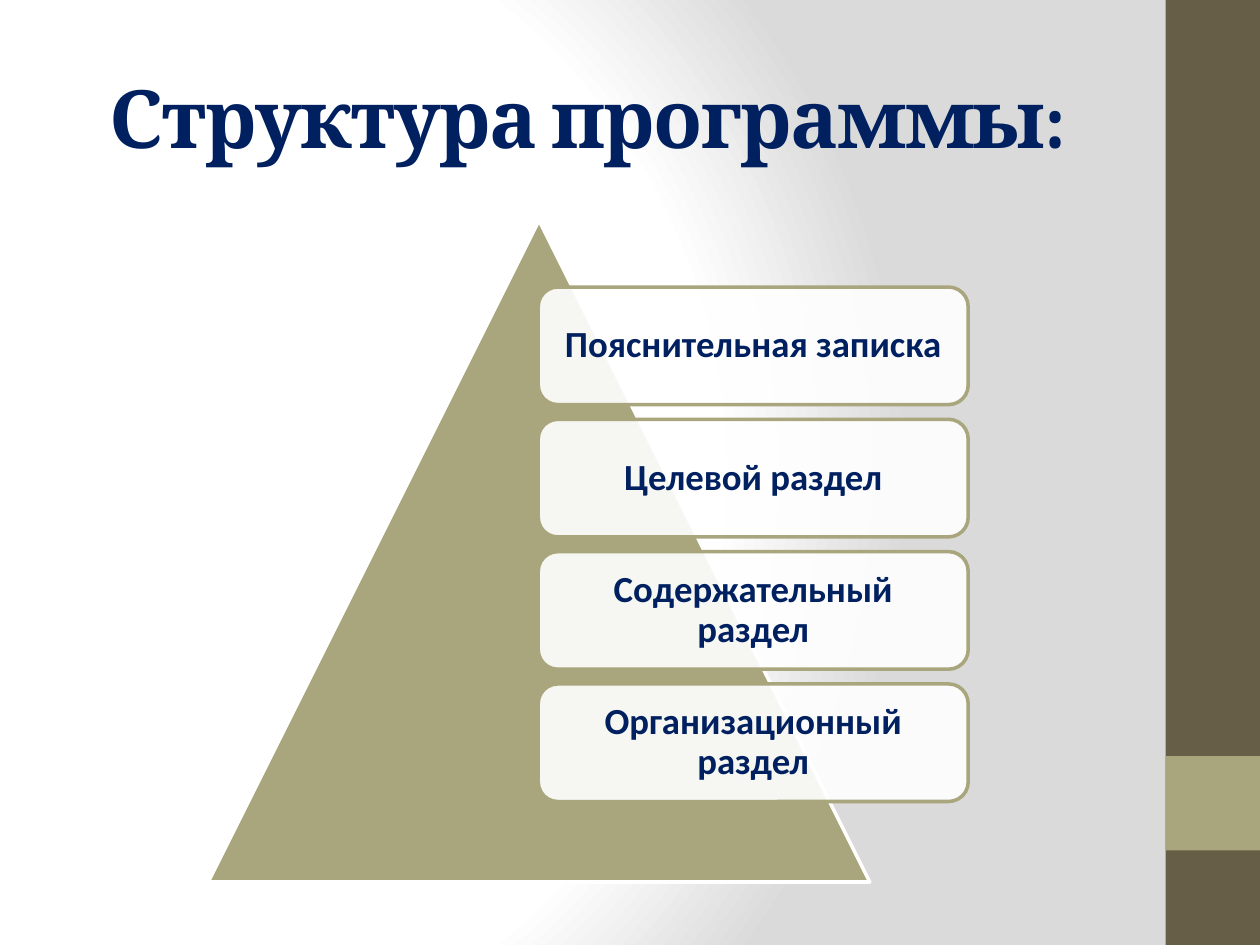
from pptx import Presentation
from pptx.dml.color import RGBColor
from pptx.enum.shapes import MSO_SHAPE
from pptx.enum.text import MSO_ANCHOR, PP_ALIGN
from pptx.oxml import parse_xml
from pptx.oxml.ns import nsdecls
from pptx.util import Pt

COLORS = {
    "navy": "002060",
    "olive": "A9A57C",
    "brown": "675E47",
    "white": "FFFFFF",
    "gray": "DADADA",
}


def add_shape(kind, left, top, width, height, fill, line=None):
    shape = slide.shapes.add_shape(kind, Pt(left), Pt(top), Pt(width), Pt(height))
    shape.shadow.inherit = False
    shape.fill.solid()
    shape.fill.fore_color.rgb = RGBColor.from_string(COLORS[fill])
    if line:
        shape.line.color.rgb = RGBColor.from_string(COLORS[line])
        shape.line.width = Pt(2)
    else:
        shape.line.fill.background()
    return shape


def write_text(shape, text, *, font, size, inset, line_spacing=1.0, tracking=0):
    frame = shape.text_frame
    frame.word_wrap = True
    frame.vertical_anchor = MSO_ANCHOR.MIDDLE
    frame.margin_left = frame.margin_right = Pt(inset)
    frame.margin_top = frame.margin_bottom = Pt(inset)
    paragraph = frame.paragraphs[0]
    paragraph.alignment = PP_ALIGN.CENTER
    paragraph.line_spacing = line_spacing
    run = paragraph.add_run()
    run.text = text
    run.font.name = font
    run.font.size = Pt(size)
    run.font.bold = True
    run.font.color.rgb = RGBColor.from_string(COLORS["navy"])
    if tracking:
        run.font._element.set("spc", str(tracking * 100))


presentation = Presentation()
presentation.slide_width, presentation.slide_height = Pt(720), Pt(540)
slide = presentation.slides.add_slide(presentation.slide_layouts[6])

# Background: radial gradient from white to gray
stops = "".join(
    f'<a:gs pos="{position * 1000}"><a:srgbClr val="{COLORS[color]}"/></a:gs>'
    for position, color in [(0, "white"), (75, "white"), (100, "gray")]
)
slide.element.cSld.insert(0, parse_xml(
    f'<p:bg {nsdecls("p", "a")}><p:bgPr><a:gradFill rotWithShape="1">'
    f'<a:gsLst>{stops}</a:gsLst><a:path path="circle">'
    '<a:fillToRect l="20000" t="50000" r="100000" b="50000"/></a:path>'
    '</a:gradFill><a:effectLst/></p:bgPr></p:bg>'
))

# Side band with accent
add_shape(MSO_SHAPE.RECTANGLE, 666, 0, 54, 540, "brown")
add_shape(MSO_SHAPE.RECTANGLE, 666, 432, 54, 54, "olive")

# Title
title = slide.shapes.add_textbox(Pt(36), Pt(21.6), Pt(600), Pt(90))
write_text(title, "Структура программы:", font="Cambria", size=46, inset=3.6, tracking=-1)

# Pyramid
add_shape(MSO_SHAPE.ISOSCELES_TRIANGLE, 119, 126, 378, 378, "olive", "white")

# Program sections, stacked over the pyramid
sections = [
    "Пояснительная записка",
    "Целевой раздел",
    "Содержательный раздел",
    "Организационный раздел",
]
for index, section in enumerate(sections):
    box = add_shape(MSO_SHAPE.ROUNDED_RECTANGLE, 307.6, 164 + index * 75.6,
                    245.7, 67.2, "white", "olive")
    color = box.fill._xPr.find(".//{*}srgbClr")
    color.append(parse_xml(f'<a:alpha {nsdecls("a")} val="90000"/>'))
    write_text(box, section, font="Calibri", size=21, inset=6.5, line_spacing=0.9)

presentation.save("out.pptx")
